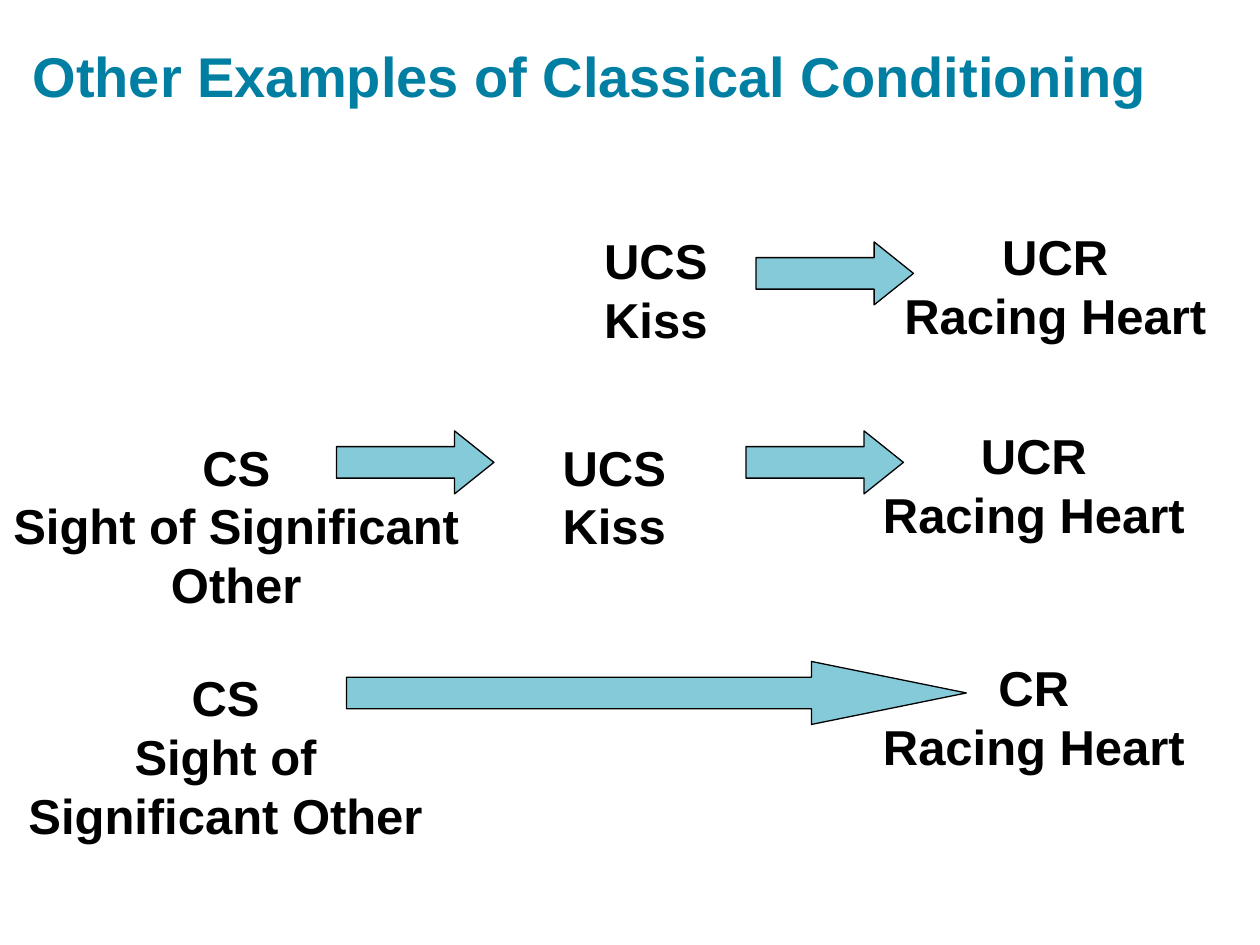
from pptx import Presentation
from pptx.dml.color import RGBColor
from pptx.enum.shapes import MSO_SHAPE
from pptx.enum.text import MSO_ANCHOR, PP_ALIGN
from pptx.util import Inches, Pt

ARROW = MSO_SHAPE.RIGHT_ARROW
TOP, BOTTOM = MSO_ANCHOR.TOP, MSO_ANCHOR.BOTTOM
LEFT, CENTER = PP_ALIGN.LEFT, PP_ALIGN.CENTER

FONT = "Arial"
TITLE = "Other Examples of Classical Conditioning"
PAIR_W = 2.75
LINE_H = 33.6
ARROW_H = 0.5
HEAD_RATIO = 0.25

LABELS = [
    (3.83, 1.78, PAIR_W, 2, ["UCS", "Kiss"]),
    (7, 1.75, PAIR_W, 2, ["UCR", "Racing Heart"]),
    (0, 3.42, 3.75, 3, ["CS", "Sight of Significant Other"]),
    (3.5, 3.42, PAIR_W, 2, ["UCS", "Kiss"]),
    (6.83, 3.33, PAIR_W, 2, ["UCR", "Racing Heart"]),
    (0, 5.25, 3.58, 3, ["CS", "Sight of Significant Other"]),
    (6.83, 5.17, PAIR_W, 2, ["CR", "Racing Heart"]),
]
ARROWS = [(6, 1.92, 1.25), (5.92, 3.42, 1.25), (2.67, 3.42, 1.25), (2.75, 5.25, 4.92)]


def rgb(value):
    return RGBColor.from_string(value)


def add_text(s, box, lines, size, color, align, anchor, inset_y, spacing=None):
    tf = s.shapes.add_textbox(*map(Inches, box)).text_frame
    tf.word_wrap = True
    tf.vertical_anchor = anchor
    tf.margin_top = tf.margin_bottom = Inches(inset_y)
    for i, line in enumerate(lines):
        p = tf.paragraphs[0] if i == 0 else tf.add_paragraph()
        p.alignment = align
        p.line_spacing = spacing
        r = p.add_run()
        r.text = line
        r.font.name = FONT
        r.font.size = Pt(size)
        r.font.bold = True
        r.font.color.rgb = rgb(color)


def add_arrow(s, left, top, width):
    sp = s.shapes.add_shape(ARROW, *map(Inches, (left, top, width, ARROW_H)))
    sp.adjustments[0] = 0.5
    sp.adjustments[1] = HEAD_RATIO * width / ARROW_H
    sp.shadow.inherit = False
    sp.fill.solid()
    sp.fill.fore_color.rgb = rgb("85CAD9")
    sp.line.color.rgb = rgb("000000")
    sp.line.width = Pt(0.75)


def main():
    """Build the classical conditioning slide."""
    prs = Presentation()
    prs.slide_width, prs.slide_height = Inches(10), Inches(7.5)
    s = prs.slides.add_slide(prs.slide_layouts[6])
    add_text(s, (0.16, 0.24, 9.34, 0.72), [TITLE], 32, "007FA3", LEFT, BOTTOM, 0.1)
    for left, top, width, rows, lines in LABELS:
        height = 0.1 + rows * LINE_H / 72
        add_text(s, (left, top, width, height), lines, 28, "000000",
                 CENTER, TOP, 0.05, Pt(LINE_H))
    for arrow in ARROWS:
        add_arrow(s, *arrow)
    prs.save("out.pptx")


if __name__ == "__main__":
    main()
